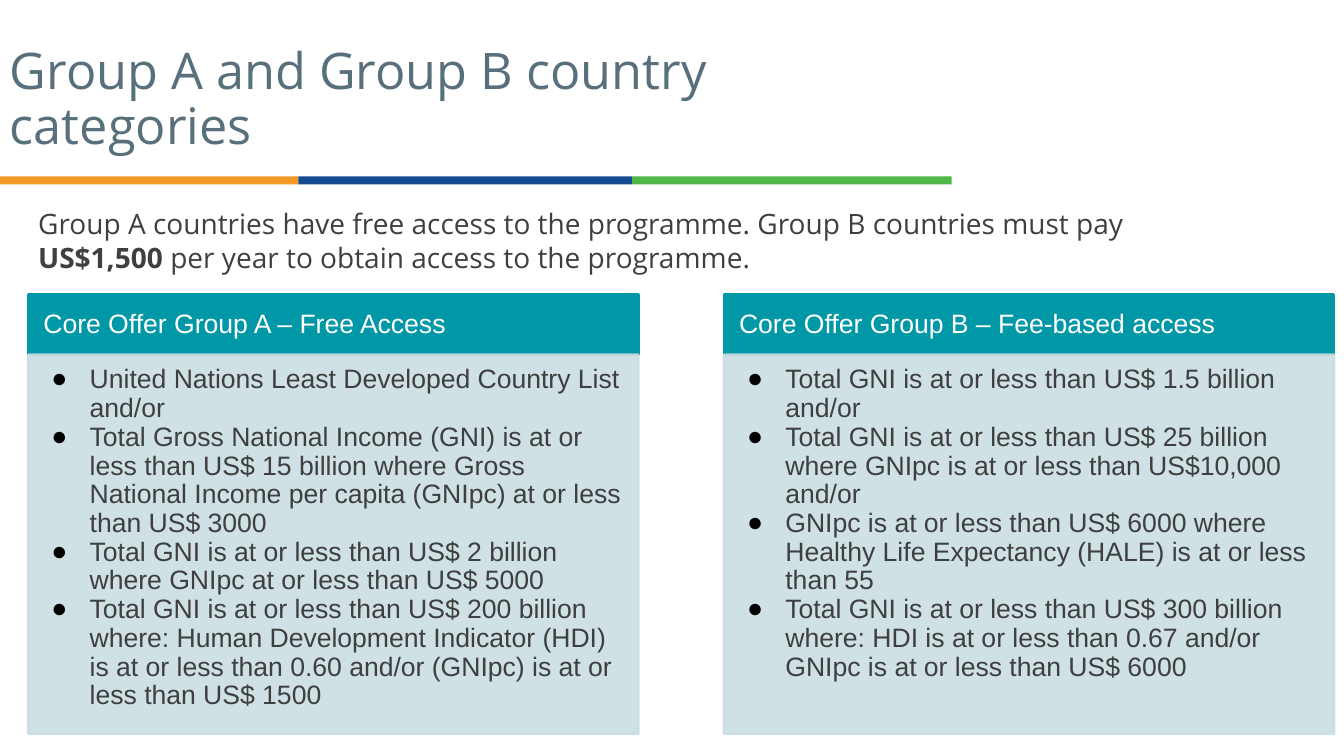
from lxml.etree import SubElement
from pptx import Presentation
from pptx.dml.color import RGBColor
from pptx.enum.shapes import MSO_SHAPE
from pptx.enum.text import MSO_ANCHOR, PP_ALIGN
from pptx.oxml.ns import qn
from pptx.util import Inches, Pt

COLORS = {"slate": "586F7C", "orange": "F49925", "blue": "154A90", "green": "4EB748",
          "teal": "0097A7", "pale": "C9DDE1", "dark": "3F3F3F", "white": "FFFFFF",
          "black": "000000"}
TITLE = "Group A and Group B country categories"
INTRO = [
    ("Group A countries have free access to the programme. Group B countries must pay ", False),
    ("US$1,500 ", True),
    ("per year to obtain access to the programme.", False),
]
STRIPES = [("orange", 2.96), ("blue", 3.31), ("green", 3.17)]
OFFERS = [
    ("Core Offer Group A – Free Access", [
        "United Nations Least Developed Country List and/or",
        "Total Gross National Income (GNI) is at or less than US$ 15 billion where Gross "
        "National Income per capita (GNIpc) at or less than US$ 3000",
        "Total GNI is at or less than US$ 2 billion where GNIpc at or less than US$ 5000",
        "Total GNI is at or less than US$ 200 billion where: Human Development Indicator (HDI) "
        "is at or less than 0.60 and/or (GNIpc) is at or less than US$ 1500",
    ]),
    ("Core Offer Group B – Fee-based access", [
        "Total GNI is at or less than US$ 1.5 billion and/or",
        "Total GNI is at or less than US$ 25 billion where GNIpc is at or less than "
        "US$10,000 and/or",
        "GNIpc is at or less than US$ 6000 where Healthy Life Expectancy (HALE) is at or "
        "less than 55",
        "Total GNI is at or less than US$ 300 billion where: HDI is at or less than 0.67 "
        "and/or GNIpc is at or less than US$ 6000",
    ]),
]
FORMATS = {
    "title": {"name": "Open Sans", "size": Pt(36), "color": "slate"},
    "intro": {"name": "Open Sans", "size": Pt(20), "color": "dark"},
    "head": {"name": "Arial", "size": Pt(19), "color": "white"},
    "body": {"name": "Arial", "size": Pt(19), "color": "dark"},
}
LEFT, TOP, WIDTH, STEP = 0.28, 2.92, 6.05, 6.9
HEAD_H, BODY_H = 0.6, 3.76


def rgb(color):
    return RGBColor.from_string(COLORS[color])


def add_box(s, at, color, line=None, alpha=None):
    sp = s.shapes.add_shape(MSO_SHAPE.RECTANGLE, *map(Inches, at))
    sp.shadow.inherit = False
    sp.fill.solid()
    sp.fill.fore_color.rgb = rgb(color)
    if line:
        sp.line.color.rgb = rgb(color)
        sp.line.width = Pt(line)
    else:
        sp.line.fill.background()
    if alpha:
        for clr in sp._element.spPr.iter(qn("a:srgbClr")):
            SubElement(clr, qn("a:alpha"), val=str(alpha * 1000))
    return sp


def add_bullet(p):
    pPr = p._p.get_or_add_pPr()
    pPr.set("marL", str(Inches(0.5)))
    pPr.set("indent", str(Inches(-0.38)))
    clr = SubElement(pPr, qn("a:buClr"))
    SubElement(clr, qn("a:srgbClr"), val=COLORS["black"])
    SubElement(pPr, qn("a:buFont"), typeface="Arial")
    SubElement(pPr, qn("a:buChar"), char="●")


def write(sp, paragraphs, kind, insets, anchor=MSO_ANCHOR.TOP, spacing=0.9, bullets=False):
    tf = sp.text_frame
    tf.word_wrap = True
    tf.vertical_anchor = anchor
    for side, inset in zip(("left", "top", "right", "bottom"), insets):
        setattr(tf, f"margin_{side}", Inches(inset))
    for i, runs in enumerate(paragraphs):
        p = tf.add_paragraph() if i else tf.paragraphs[0]
        if bullets:
            add_bullet(p)
        p.alignment = PP_ALIGN.LEFT
        p.line_spacing = spacing
        for text, bold in runs:
            r = p.add_run()
            r.text = text
            r.font.bold = bold
            for key, value in FORMATS[kind].items():
                if key == "color":
                    r.font.color.rgb = rgb(value)
                else:
                    setattr(r.font, key, value)


def main():
    prs = Presentation()
    prs.slide_width, prs.slide_height = Inches(13.33), Inches(7.5)
    s = prs.slides.add_slide(prs.slide_layouts[6])

    x = 0
    for color, width in STRIPES:
        add_box(s, (x, 1.75, width, 0.08), color)
        x += width

    title = s.shapes.add_textbox(*map(Inches, (0, 0.41, 8.02, 1.18)))
    write(title, [[(TITLE, False)]], "title", (0.1, 0.05, 0.1, 0.05), MSO_ANCHOR.MIDDLE)

    for i, (heading, rules) in enumerate(OFFERS):
        x = LEFT + i * STEP
        head = add_box(s, (x, TOP, WIDTH, HEAD_H), "teal", line=2)
        write(head, [[(heading, False)]], "head", (0.15, 0.08, 0.15, 0.08), MSO_ANCHOR.MIDDLE)
        body = add_box(s, (x, TOP + HEAD_H, WIDTH, BODY_H), "pale", line=2, alpha=88)
        write(body, [[(rule, False)] for rule in rules], "body",
              (0.11, 0.11, 0.15, 0.17), bullets=True)

    intro = s.shapes.add_textbox(*map(Inches, (LEFT, 2, 12.06, 0.77)))
    write(intro, [INTRO], "intro", (0.1, 0.05, 0.1, 0.05), spacing=1.0)

    prs.save("out.pptx")


if __name__ == "__main__":
    main()
